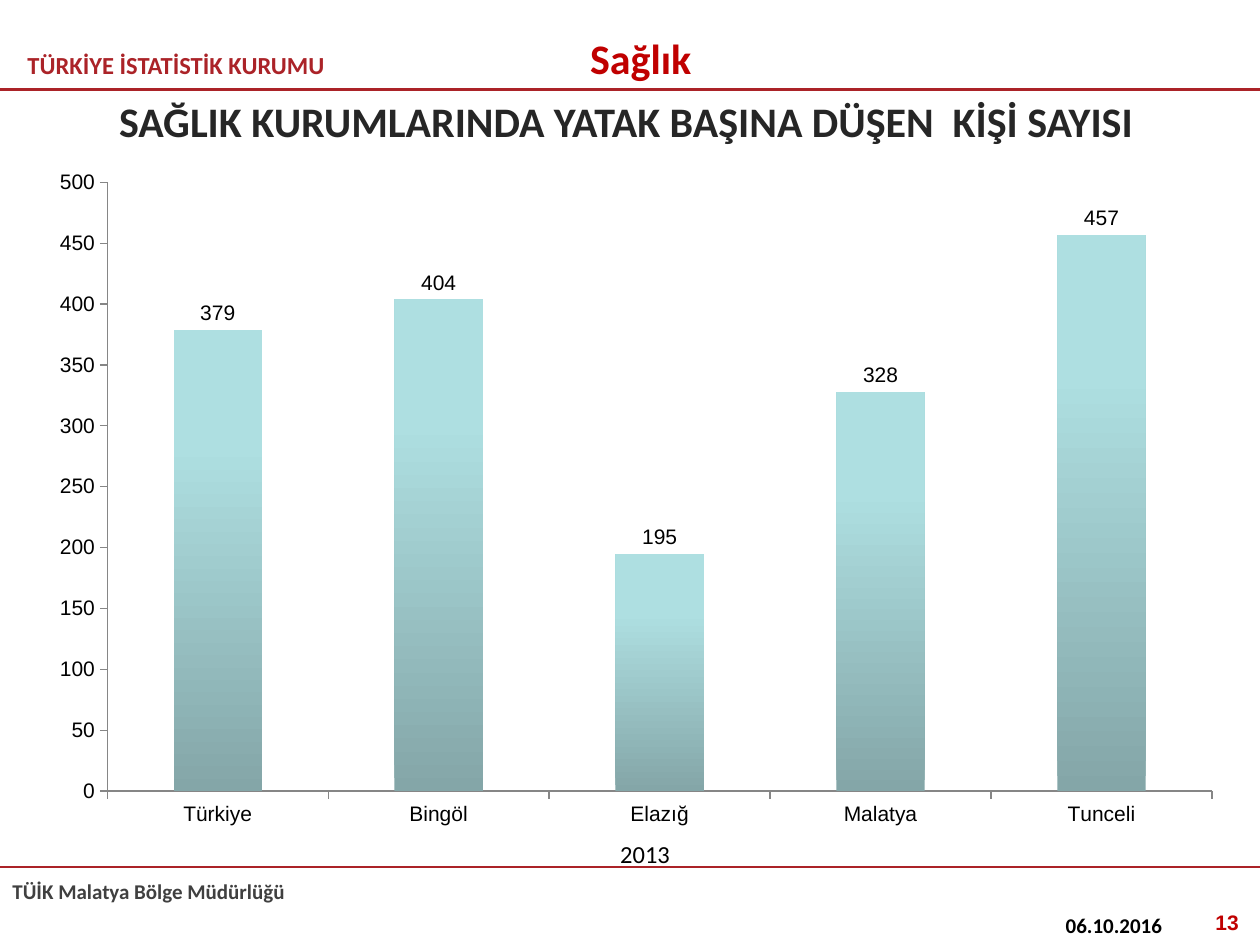
from dataclasses import dataclass

from lxml import etree
from pptx import Presentation
from pptx.chart.data import CategoryChartData
from pptx.dml.color import RGBColor
from pptx.enum.chart import XL_CHART_TYPE, XL_LABEL_POSITION, XL_TICK_MARK
from pptx.enum.shapes import MSO_CONNECTOR
from pptx.enum.text import MSO_ANCHOR, PP_ALIGN
from pptx.oxml import parse_xml
from pptx.oxml.ns import nsdecls, qn
from pptx.util import Inches, Pt

COLUMN = XL_CHART_TYPE.COLUMN_CLUSTERED
OUTSIDE = XL_LABEL_POSITION.OUTSIDE_END
TICK_OUT, TICK_NONE = XL_TICK_MARK.OUTSIDE, XL_TICK_MARK.NONE
STRAIGHT = MSO_CONNECTOR.STRAIGHT
TOP, MIDDLE, BOTTOM = MSO_ANCHOR.TOP, MSO_ANCHOR.MIDDLE, MSO_ANCHOR.BOTTOM
LEFT, CENTER, RIGHT = PP_ALIGN.LEFT, PP_ALIGN.CENTER, PP_ALIGN.RIGHT

BRAND, RED, BLACK, GREY = "AB2328", "C00000", "000000", "868686"
BEDS = {"Türkiye": 379, "Bingöl": 404, "Elazığ": 195, "Malatya": 328, "Tunceli": 457}


@dataclass
class Label:
    """A one-line text box with its place and style."""
    text: str
    box: tuple[float, float, float, float]
    size: int
    color: str
    align: PP_ALIGN = LEFT
    anchor: MSO_ANCHOR = TOP
    face: str = "Calibri"


LABELS = [
    Label("TÜRKİYE İSTATİSTİK KURUMU", (0.12, 0.32, 3.54, 0.39), 14, BRAND, anchor=MIDDLE),
    Label("TÜİK Malatya Bölge Müdürlüğü", (0, 6.92, 4.29, 0.3), 12, "404040"),
    Label("SAĞLIK KURUMLARINDA YATAK BAŞINA DÜŞEN  KİŞİ SAYISI",
          (0.47, 0.52, 9, 0.87), 24, "262626", CENTER, MIDDLE),
    Label("06.10.2016", (8.36, 7.19, 1.2, 0.3), 12, BLACK),
    Label("13", (7.6, 7.17, 2.33, 0.3), 12, RED, RIGHT, face="Arial"),
    Label("Sağlık", (4.13, 0.21, 1.91, 0.5), 24, RED, CENTER, MIDDLE),
]


def rgb(code: str) -> RGBColor:
    """Turn a hex string into a colour."""
    return RGBColor.from_string(code)


def style(font, size: int, color: str, face: str, bold: bool = False) -> None:
    """Set the look of a font."""
    font.size, font.name, font.bold = Pt(size), face, bold
    font.color.rgb = rgb(color)


def add_label(slide, label: Label) -> None:
    """Draw a bold text box."""
    frame = slide.shapes.add_textbox(*map(Inches, label.box)).text_frame
    frame.word_wrap = True
    frame.vertical_anchor = label.anchor
    para = frame.paragraphs[0]
    para.alignment = label.align
    run = para.add_run()
    run.text = label.text
    style(run.font, label.size, label.color, label.face, True)


def add_rule(slide, top: float) -> None:
    """Draw a line across the whole slide."""
    rule = slide.shapes.add_connector(STRAIGHT, 0, Inches(top), Inches(10), Inches(top))
    rule.line.color.rgb = rgb(BRAND)
    rule.line.width = Pt(1.5)
    etree.SubElement(rule._element.spPr, qn("a:effectLst"))


def add_chart(slide) -> None:
    """Draw the column chart of people per bed."""
    data = CategoryChartData(number_format="0")
    data.categories = list(BEDS)
    data.add_series("Series 1", list(BEDS.values()))
    box = map(Inches, (0.28, 1.23, 9.53, 5.43))
    chart = slide.shapes.add_chart(COLUMN, *box, data).chart
    chart.has_legend = chart.has_title = False
    style(chart.font, 12, BLACK, "Arial")

    plot = chart.plots[0]
    plot.gap_width, plot.vary_by_categories = 150, False
    plot.has_data_labels = True
    marks = plot.data_labels
    marks.show_value, marks.position = True, OUTSIDE
    marks.number_format, marks.number_format_is_linked = "0", False
    style(marks.font, 12, BLACK, "Arial")

    fill = plot.series[0].format.fill
    fill.gradient()
    fill.gradient_angle = 90
    for stop, color, place in zip(fill.gradient_stops, ("84A6A8", "AEDFE1"), (0, 0.75)):
        stop.color.rgb = rgb(color)
        stop.position = place

    for axis in (chart.category_axis, chart.value_axis):
        axis.has_major_gridlines = False
        axis.major_tick_mark, axis.minor_tick_mark = TICK_OUT, TICK_NONE
        axis.format.line.color.rgb = rgb(GREY)
        style(axis.tick_labels.font, 12, BLACK, "Arial")
    scale = chart.value_axis
    scale.minimum_scale, scale.maximum_scale, scale.major_unit = 0, 500, 50
    place_plot(chart, {"x": 0.06, "y": 0.04, "w": 0.92, "h": 0.89})


def place_plot(chart, parts: dict[str, float]) -> None:
    """Fix the inner plot area as shares of the chart."""
    sizes = "".join(f'<c:{key} val="{val}"/>' for key, val in parts.items())
    layout = parse_xml(
        f'<c:layout {nsdecls("c")}><c:manualLayout><c:layoutTarget val="inner"/>'
        f'<c:xMode val="edge"/><c:yMode val="edge"/>{sizes}</c:manualLayout></c:layout>')
    area = chart._chartSpace.chart.plotArea
    for old in area.findall(qn("c:layout")):
        area.remove(old)
    area.insert(0, layout)


def add_table(slide) -> None:
    """Draw the one-row table that holds the year."""
    box = map(Inches, (0, 6.67, 10.08, 0.23))
    table = slide.shapes.add_table(1, 3, *box).table
    table.first_row = table.horz_banding = False
    for index, (width, text) in enumerate(zip((3.36, 3.52, 3.2), ("", "2013", ""))):
        table.columns[index].width = Inches(width)
        cell = table.cell(0, index)
        cell.fill.background()
        cell.margin_left = cell.margin_right = cell.margin_top = cell.margin_bottom = 0
        cell.vertical_anchor = BOTTOM
        para = cell.text_frame.paragraphs[0]
        para.alignment = CENTER
        if text:
            run = para.add_run()
            run.text = text
            style(run.font, 14, BLACK, "Calibri")
        else:
            etree.SubElement(para._p, qn("a:endParaRPr"), sz="1000")
        edges = cell._tc.get_or_add_tcPr()
        for spot, side in enumerate(("lnL", "lnR", "lnT", "lnB")):
            edge = etree.Element(qn(f"a:{side}"))
            etree.SubElement(edge, qn("a:noFill"))
            edges.insert(spot, edge)


def main() -> None:
    """Build the slide and save it."""
    deck = Presentation()
    deck.slide_width, deck.slide_height = Inches(10), Inches(7.5)
    slide = deck.slides.add_slide(deck.slide_layouts[6])
    for top in (0.71, 6.88):
        add_rule(slide, top)
    add_chart(slide)
    add_table(slide)
    for label in LABELS:
        add_label(slide, label)
    deck.save("out.pptx")


if __name__ == "__main__":
    main()
